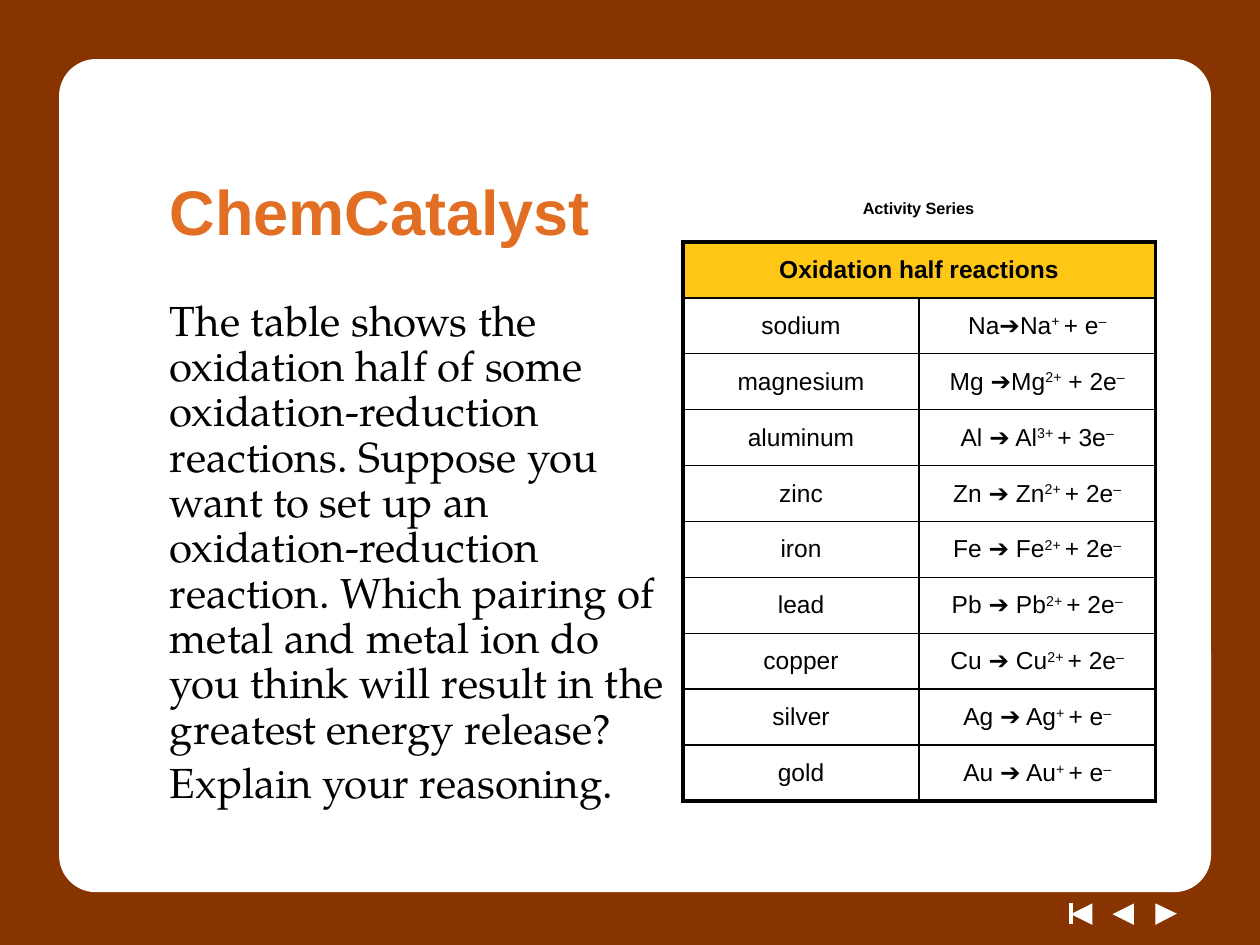
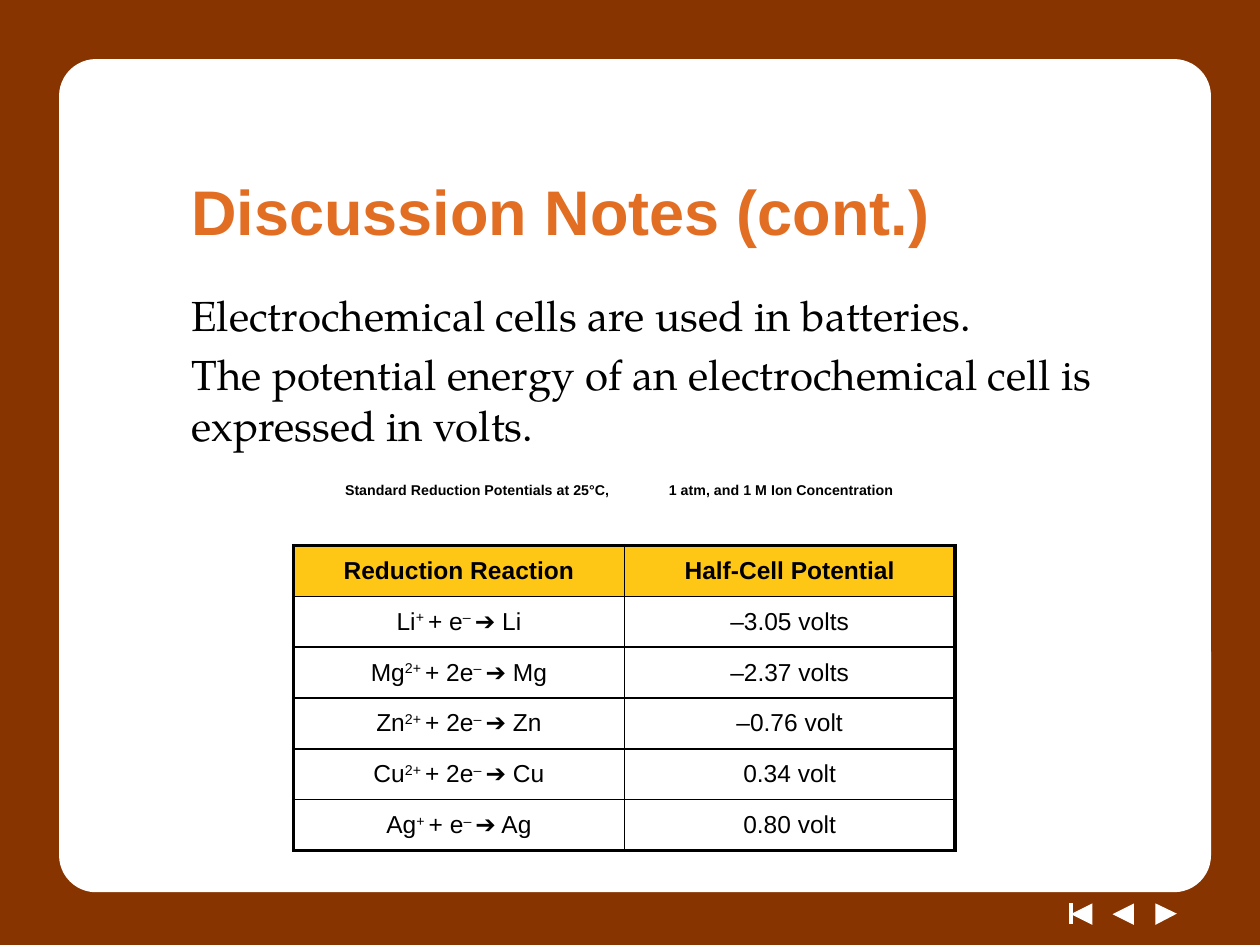
from lxml import etree
from pptx import Presentation
from pptx.dml.color import RGBColor
from pptx.enum.shapes import MSO_CONNECTOR, MSO_SHAPE
from pptx.enum.text import MSO_ANCHOR, PP_ALIGN
from pptx.oxml.ns import qn
from pptx.util import Inches, Pt

ROUNDED, TRIANGLE, RECTANGLE = MSO_SHAPE.ROUNDED_RECTANGLE, MSO_SHAPE.ISOSCELES_TRIANGLE, MSO_SHAPE.RECTANGLE
STRAIGHT = MSO_CONNECTOR.STRAIGHT
TOP, MIDDLE = MSO_ANCHOR.TOP, MSO_ANCHOR.MIDDLE
LEFT, CENTER = PP_ALIGN.LEFT, PP_ALIGN.CENTER
BROWN, ORANGE, YELLOW, WHITE, BLACK = "873401", "E16E23", "FFC715", "FFFFFF", "000000"
SANS, SERIF = "Arial", "TeX Gyre Pagella"
OUTER_BORDER, INNER_BORDER = Pt(2.25), Pt(1)


def rgb(hex_colour):
    return RGBColor.from_string(hex_colour)


def write(frame, texts, size, font=SANS, colour=BLACK, bold=False, align=LEFT,
          anchor=TOP, before=0, line_spacing=None):
    """Write one paragraph per text; a caret switches superscript on and off."""
    frame.word_wrap = True
    frame.vertical_anchor = anchor
    for index, text in enumerate(texts):
        paragraph = frame.add_paragraph() if index else frame.paragraphs[0]
        paragraph.alignment = align
        paragraph.space_before = Pt(before)
        if line_spacing:
            paragraph.line_spacing = line_spacing
        for part_index, part in enumerate(text.split("^")):
            if not part:
                continue
            run = paragraph.add_run()
            run.text = part
            run.font.size, run.font.name, run.font.bold = Pt(size), font, bold
            run.font.color.rgb = rgb(colour)
            if part_index % 2:
                run.font._element.set("baseline", "30000")


# Content of the two slides
slide_specs = [
    {
        "title": "ChemCatalyst",
        "text_left": 1.25,
        "body": ["The table shows the oxidation half of some oxidation-reduction reactions. "
                 "Suppose you want to set up an oxidation-reduction reaction. Which pairing of "
                 "metal and metal ion do you think will result in the greatest energy release?",
                 "Explain your reasoning."],
        "body_box": (2.33, 4.17, 4.5),
        "line_spacing": 0.9,
        "table_box": (5.42, 1.92, 3.75, 4.44),
        "rows": [
            ("Oxidation half reactions",),
            ("sodium", "Na➔Na^+ ^+ e^–"),
            ("magnesium", "Mg ➔Mg^2+^ + 2e^–"),
            ("aluminum", "Al ➔ Al^3+ ^+ 3e^–"),
            ("zinc", "Zn ➔ Zn^2+ ^+ 2e^–"),
            ("iron", "Fe ➔ Fe^2+ ^+ 2e^–"),
            ("lead", "Pb ➔ Pb^2+ ^+ 2e^–"),
            ("copper", "Cu ➔ Cu^2+ ^+ 2e^–"),
            ("silver", "Ag ➔ Ag^+ ^+ e^–"),
            ("gold", "Au ➔ Au^+ ^+ e^–"),
        ],
        "caption": "^Activity Series",
        "caption_box": (5.33, 1.5, 3.92, 0.37),
        "caption_size": 16,
    },
    {
        "title": "Discussion Notes (cont.)",
        "text_left": 1.42,
        "body": ["Electrochemical cells are used in batteries.",
                 "The potential energy of an electrochemical cell is expressed in volts."],
        "body_box": (2.25, 8, 4.17),
        "line_spacing": None,
        "table_box": (2.33, 4.33, 5.25, 2.42),
        "rows": [
            ("Reduction Reaction", "Half-Cell Potential"),
            ("Li^+ ^+ e^– ^➔ Li", "–3.05 volts"),
            ("Mg^2+ ^+ 2e^– ^➔ Mg", "–2.37 volts"),
            ("Zn^2+ ^+ 2e^– ^➔ Zn", "–0.76 volt"),
            ("Cu^2+ ^+ 2e^– ^➔ Cu", "0.34 volt"),
            ("Ag^+ ^+ e^– ^➔ Ag", "0.80 volt"),
        ],
        "caption": "^Standard Reduction Potentials at 25°C,\t1 atm, and 1 M Ion Concentration",
        "caption_box": (2.64, 3.75, 4.67, 0.57),
        "caption_size": 14,
        "caption_tab": 2.57,
    },
]

# Shared frame: left, top, width, height, kind, rotation, adjustment, fill
frame_shapes = [
    (0, 0, 10, 7.5, RECTANGLE, 0, None, BROWN),
    (9.17, 7.17, 0.17, 0.17, TRIANGLE, 90, 0.48, WHITE),
    (8.83, 7.17, 0.17, 0.17, TRIANGLE, 270, 0.5, WHITE),
    (8.5, 7.17, 0.17, 0.17, TRIANGLE, 270, 0.5, WHITE),
    (0.5, 0.5, 9.08, 6.55, ROUNDED, 0, 0.04, WHITE),
]

presentation = Presentation()
presentation.slide_width, presentation.slide_height = Inches(10), Inches(7.5)

for spec_item in slide_specs:
    slide = presentation.slides.add_slide(presentation.slide_layouts[6])

    # Brown border, navigation triangles and white panel
    for left, top, width, height, kind, rotation, adjustment, fill in frame_shapes:
        shape = slide.shapes.add_shape(kind, Inches(left), Inches(top), Inches(width), Inches(height))
        shape.shadow.inherit = False
        shape.rotation = rotation
        shape.fill.solid()
        shape.fill.fore_color.rgb = rgb(fill)
        if adjustment is not None:
            shape.adjustments[0] = adjustment
        if kind == ROUNDED:
            shape.line.color.rgb = rgb(WHITE)
            shape.line.width = Pt(4.5)
        else:
            shape.line.fill.background()

    # Bar of the "first slide" button
    bar = slide.shapes.add_connector(STRAIGHT, Inches(8.5), Inches(7.17), Inches(8.5), Inches(7.33))
    bar.line.color.rgb = rgb(WHITE)
    bar.line.width = Pt(2)
    etree.SubElement(bar._element.spPr, qn("a:effectLst"))

    # Title and body
    text_left = Inches(spec_item["text_left"])
    title = slide.shapes.add_textbox(text_left, Inches(1.17), Inches(8.08), Inches(1))
    write(title.text_frame, [spec_item["title"]], 36, colour=ORANGE, bold=True, anchor=MIDDLE)
    top, width, height = spec_item["body_box"]
    body = slide.shapes.add_textbox(text_left, Inches(top), Inches(width), Inches(height))
    write(body.text_frame, spec_item["body"], 24, font=SERIF, before=5,
          line_spacing=spec_item["line_spacing"])

    # Table with a yellow header and a heavy outer border
    rows = spec_item["rows"]
    left, top, width, height = [Inches(value) for value in spec_item["table_box"]]
    table = slide.shapes.add_table(len(rows), 2, left, top, width, height).table
    table.horz_banding = False
    for column in table.columns:
        column.width = width // 2
    for row in table.rows:
        row.height = height // len(rows)
    for row_index, texts in enumerate(rows):
        is_header = row_index == 0
        if len(texts) == 1:
            table.cell(row_index, 0).merge(table.cell(row_index, 1))
        for column_index, text in enumerate(texts):
            cell = table.cell(row_index, column_index)
            write(cell.text_frame, [text], 14, bold=is_header, align=CENTER, before=3)
            cell.vertical_anchor = MIDDLE
            on_edge = {
                "a:lnL": column_index == 0,
                "a:lnR": column_index == len(texts) - 1,
                "a:lnT": is_header,
                "a:lnB": row_index == len(rows) - 1,
            }
            properties = cell._tc.get_or_add_tcPr()
            for side, is_outer in on_edge.items():
                border = etree.SubElement(properties, qn(side), w=str(OUTER_BORDER if is_outer else INNER_BORDER))
                border_fill = etree.SubElement(border, qn("a:solidFill"))
                etree.SubElement(border_fill, qn("a:srgbClr"), val=BLACK)
            if is_header:
                cell.fill.solid()
                cell.fill.fore_color.rgb = rgb(YELLOW)
            else:
                cell.fill.background()

    # Table caption, raised; a tab stop separates its two halves where needed
    caption_tab = spec_item.get("caption_tab")
    size = spec_item["caption_size"]
    caption = slide.shapes.add_textbox(*[Inches(value) for value in spec_item["caption_box"]])
    write(caption.text_frame, [spec_item["caption"]], size, bold=True,
          align=LEFT if caption_tab else CENTER, before=size // 2 + 1)
    if caption_tab:
        paragraph_properties = caption.text_frame.paragraphs[0]._p.get_or_add_pPr()
        tab_list = etree.SubElement(paragraph_properties, qn("a:tabLst"))
        etree.SubElement(tab_list, qn("a:tab"), pos=str(Inches(caption_tab)), algn="l")

presentation.save("out.pptx")
